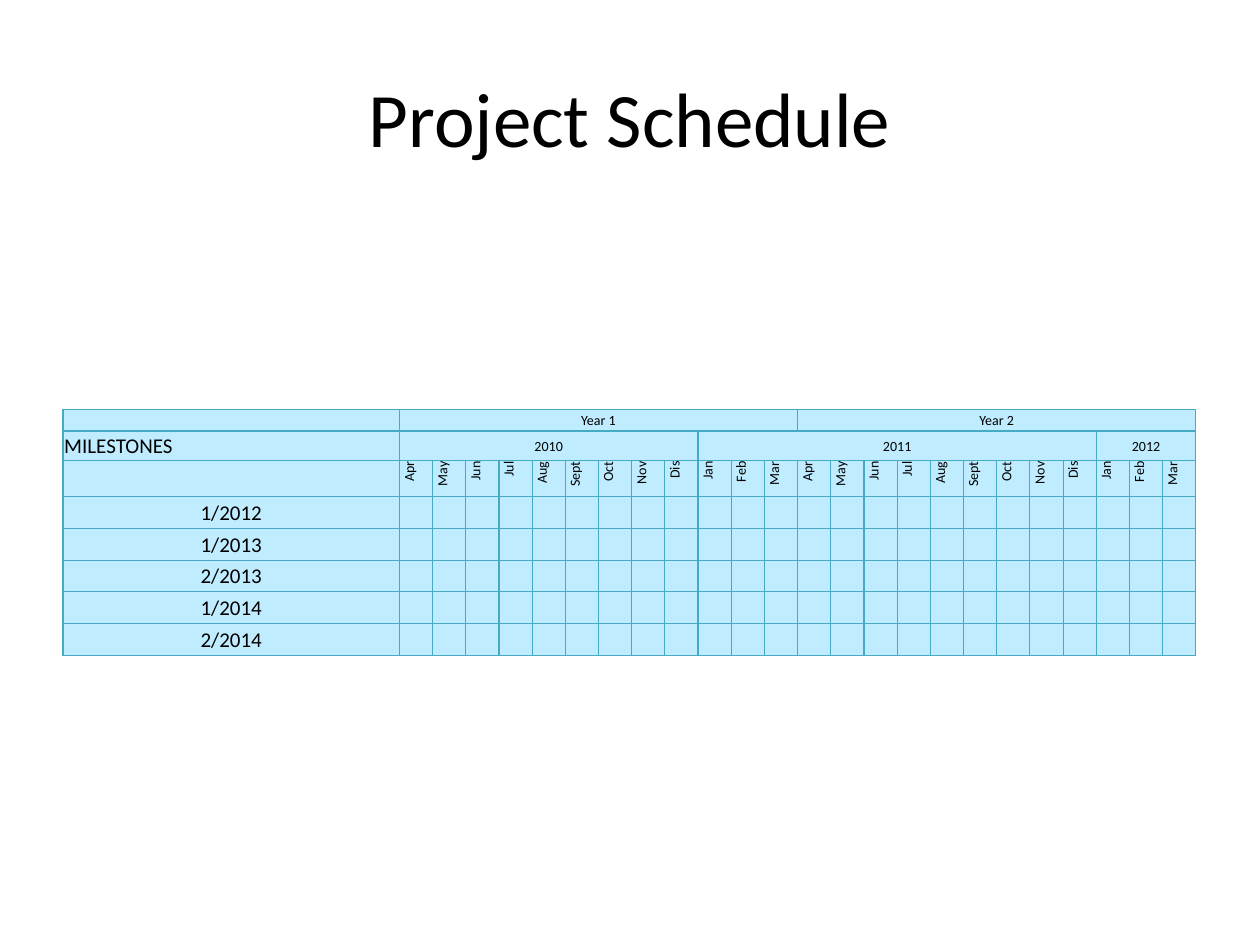
from dataclasses import dataclass
from lxml.etree import SubElement
from pptx import Presentation
from pptx.dml.color import RGBColor
from pptx.enum.text import MSO_ANCHOR, PP_ALIGN
from pptx.oxml.ns import qn
from pptx.util import Inches, Pt


@dataclass(frozen=True)
class Theme:
    """Colours, font and type sizes of the schedule."""
    font: str = "Calibri"
    ink: str = "000000"
    fill: str = "BFECFF"
    line: str = "46AAC5"
    rule: float = 0.75
    title: int = 44
    label: int = 12
    small: int = 8


class Board:
    """Draws elements on one slide, placed by shares of its size."""

    def __init__(self, deck, theme):
        """Add a blank slide to the deck."""
        self.deck, self.theme = deck, theme
        self.slide = deck.slides.add_slide(deck.slide_layouts[6])

    def area(self, x, y, w, h):
        """Turn shares of the slide into lengths."""
        wide, high = self.deck.slide_width, self.deck.slide_height
        return [round(n) for n in (x * wide, y * high, w * wide, h * high)]

    def text(self, frame, words, size, align):
        """Put one styled run into a frame."""
        para = frame.paragraphs[0]
        para.alignment = align
        run = para.add_run()
        run.text = words
        run.font.name, run.font.size = self.theme.font, Pt(size)
        run.font.color.rgb = RGBColor.from_string(self.theme.ink)

    def title(self, words, *share):
        """Add the centred heading."""
        frame = self.slide.shapes.add_textbox(*self.area(*share)).text_frame
        frame.word_wrap = True
        frame.vertical_anchor = MSO_ANCHOR.MIDDLE
        self.text(frame, words, self.theme.title, PP_ALIGN.CENTER)

    def table(self, share, cols, rows):
        """Add a ruled table whose columns and rows follow given weights."""
        box = self.area(*share)
        table = self.slide.shapes.add_table(len(rows), len(cols), *box).table
        table.first_row = table.horz_banding = False
        for part, weight in zip(table.columns, cols):
            part.width = round(box[2] * weight / sum(cols))
        for part, weight in zip(table.rows, rows):
            part.height = round(box[3] * weight / sum(rows))
        for cell in table.iter_cells():
            self.style(cell)
        return table

    def style(self, cell):
        """Give a cell its borders, fill, margins and base type size."""
        props = cell._tc.get_or_add_tcPr()
        for side in ("lnL", "lnR", "lnT", "lnB"):
            line = SubElement(props, qn(f"a:{side}"), w=str(Pt(self.theme.rule)))
            paint = SubElement(line, qn("a:solidFill"))
            SubElement(paint, qn("a:srgbClr"), val=self.theme.line)
        cell.fill.solid()
        cell.fill.fore_color.rgb = RGBColor.from_string(self.theme.fill)
        cell.margin_left = cell.margin_right = cell.margin_top = Inches(0.01)
        cell.margin_bottom = 0
        cell.vertical_anchor = MSO_ANCHOR.MIDDLE
        para = cell.text_frame.paragraphs[0]
        SubElement(para._p, qn("a:endParaRPr"), sz=str(self.theme.small * 100))

    def label(self, cell, words, align=PP_ALIGN.CENTER):
        """Add a milestone label."""
        self.text(cell.text_frame, words, self.theme.label, align)

    def band(self, table, row, spans):
        """Merge and name consecutive groups of months."""
        col = 1
        for words, count in spans:
            cell = table.cell(row, col)
            cell.merge(table.cell(row, col + count - 1))
            self.text(cell.text_frame, words, self.theme.small, PP_ALIGN.CENTER)
            col += count

    def month(self, cell, words):
        """Add a month name turned upwards."""
        cell._tc.get_or_add_tcPr().set("vert", "vert270")
        self.text(cell.text_frame, words, self.theme.small, PP_ALIGN.RIGHT)


def main():
    """Build the project schedule."""
    deck = Presentation()
    deck.slide_width, deck.slide_height = Inches(10), Inches(7.5)
    board = Board(deck, Theme())
    board.title("Project Schedule", 0.05, 0.04, 0.9, 1 / 6)

    months = "Apr May Jun Jul Aug Sept Oct Nov Dis Jan Feb Mar".split() * 2
    stones = ["1/2012", "1/2013", "2/2013", "1/2014", "2/2014"]
    cols = [2.67] + [6.33 / len(months)] * len(months)
    rows = [0.17, 0.23, 0.29] + [0.25] * len(stones)
    table = board.table((0.05, 13 / 30, 0.9, 0.26), cols, rows)
    board.band(table, 0, [("Year 1", 12), ("Year 2", 12)])
    board.band(table, 1, [("2010", 9), ("2011", 12), ("2012", 3)])
    board.label(table.cell(1, 0), "MILESTONES", PP_ALIGN.LEFT)
    for col, name in enumerate(months, 1):
        board.month(table.cell(2, col), name)
    for row, name in enumerate(stones, 3):
        board.label(table.cell(row, 0), name)
    deck.save("out.pptx")


if __name__ == "__main__":
    main()
